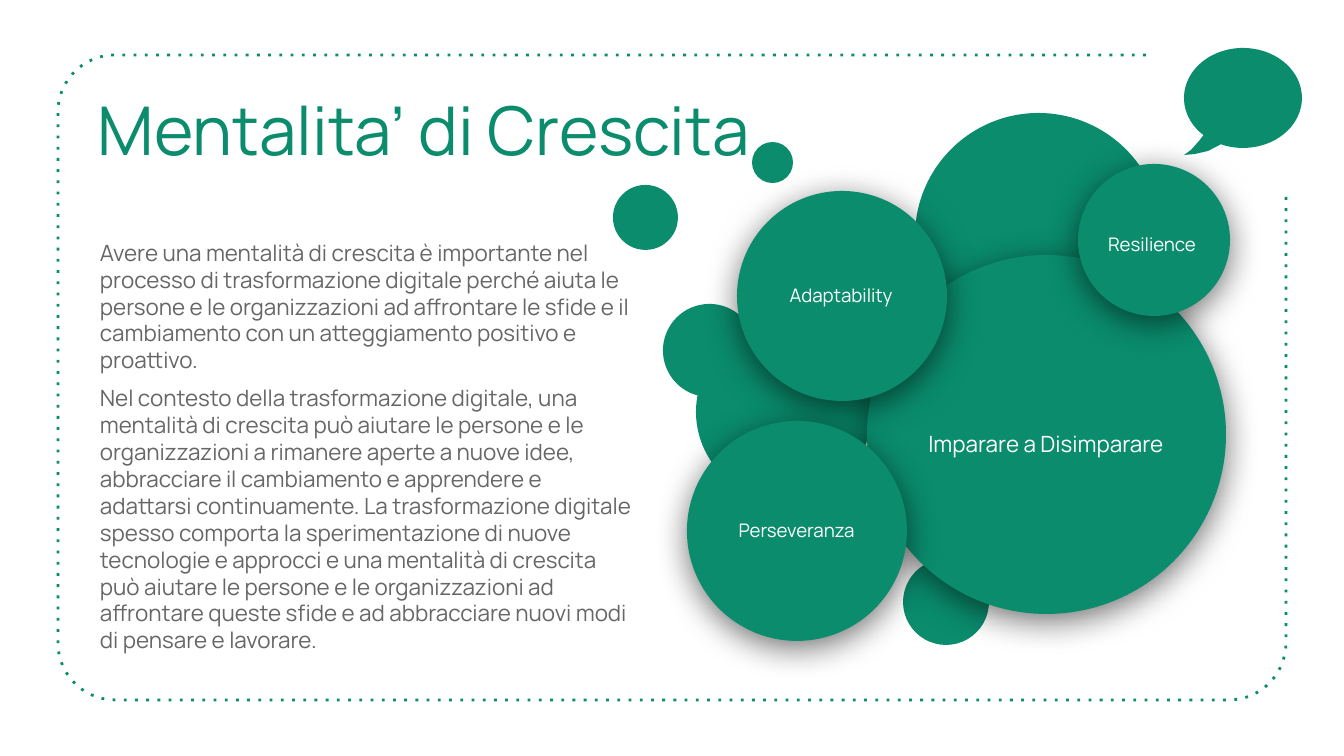
from math import cos, radians, sin

from lxml.etree import SubElement
from pptx import Presentation
from pptx.dml.color import RGBColor
from pptx.enum.shapes import MSO_SHAPE
from pptx.enum.text import MSO_ANCHOR, PP_ALIGN
from pptx.oxml.ns import qn
from pptx.util import Pt

PX = 914400 / 134.4
GREEN, GREY, WHITE = "0A8C6D", "666666", "FFFFFF"
INSET = 13

TITLE = "Mentalita’ di Crescita"
BODY = [
    "Avere una mentalità di crescita è importante nel processo di trasformazione "
    "digitale perché aiuta le persone e le organizzazioni ad affrontare le sfide e il "
    "cambiamento con un atteggiamento positivo e proattivo.",
    "Nel contesto della trasformazione digitale, una mentalità di crescita può aiutare "
    "le persone e le organizzazioni a rimanere aperte a nuove idee, abbracciare il "
    "cambiamento e apprendere e adattarsi continuamente. La trasformazione digitale "
    "spesso comporta la sperimentazione di nuove tecnologie e approcci e una mentalità "
    "di crescita può aiutare le persone e le organizzazioni ad affrontare queste sfide "
    "e ad abbracciare nuovi modi di pensare e lavorare.",
]
PLAIN_CIRCLES = [
    (903, 559, 86), (613, 185, 65), (696, 324, 176),
    (915, 113, 247), (663, 304, 93), (752, 142, 41),
]
SKILLS = [
    ("Imparare a Disimparare", 12, (867, 255, 359), (909, 358, 274, 171)),
    ("Adaptability", 10, (737, 191, 210), (770, 226, 142, 138)),
    ("Perseveranza", 10, (687, 421, 220), (718, 461, 157, 138)),
    ("Resilience", 10, (1078, 164, 152), (1094, 204, 116, 81)),
]
FRAME = {"left": 58, "top": 55, "right": 1286, "bottom": 700, "radius": 57}
FRAME_START, FRAME_END = (1146, 55), (1286, 196)
SPEECH_TAIL = [(1208, 151), (1195, 154), (1184, 155), (1191, 150), (1199, 141)]


def emu(px):
    """Turn px into EMU."""
    return round(px * PX)


def colour(value):
    """Turn a hex string into a colour."""
    return RGBColor.from_string(value)


def arc(cx, cy, rx, ry, start, end, step):
    """List points on an ellipse between two angles."""
    angles = [radians(a) for a in range(start, end, step)] + [radians(end)]
    return [(cx + rx * cos(a), cy + ry * sin(a)) for a in angles]


def write(shape, paragraphs, size, ink, anchor=MSO_ANCHOR.TOP, **layout):
    """Fill a shape with formatted paragraphs."""
    frame = shape.text_frame
    sides = ("margin_left", "margin_top", "margin_right", "margin_bottom")
    settings = {"word_wrap": True, "vertical_anchor": anchor}
    for name, value in {**settings, **dict.fromkeys(sides, emu(INSET))}.items():
        setattr(frame, name, value)
    for index, text in enumerate(paragraphs):
        paragraph = frame.add_paragraph() if index else frame.paragraphs[0]
        for name, value in layout.items():
            setattr(paragraph, name, value)
        run = paragraph.add_run()
        run.text = text
        for name, value in {"name": "Manrope", "size": Pt(size)}.items():
            setattr(run.font, name, value)
        run.font.color.rgb = colour(ink)
    return frame


def paint(shape):
    """Give a shape a plain green fill."""
    shape.shadow.inherit = False
    shape.fill.solid()
    shape.fill.fore_color.rgb = colour(GREEN)
    shape.line.fill.background()
    return shape


def add_green(slide, preset, x, y, width, height):
    """Add a green preset shape."""
    return paint(slide.shapes.add_shape(preset, *map(emu, (x, y, width, height))))


def add_outline(slide, points, close):
    """Add a freeform through px points."""
    builder = slide.shapes.build_freeform(*map(emu, points[0]))
    builder.add_line_segments([tuple(map(emu, p)) for p in points[1:]], close=close)
    return builder.convert_to_shape()


def add_frame(slide):
    """Draw the open dotted frame."""
    left, top, right, bottom, r = FRAME.values()
    points = [FRAME_START]
    for cx, cy, start in (
        (left + r, top + r, 270), (left + r, bottom - r, 180), (right - r, bottom - r, 90),
    ):
        points += arc(cx, cy, r, r, start, start - 90, -6)
    border = add_outline(slide, points + [FRAME_END], False)
    border.shadow.inherit = False
    border.fill.background()
    border.line.color.rgb = colour(GREEN)
    border.line.width = Pt(1.5)
    dash = SubElement(border.line.fill._xPr, qn("a:prstDash"))
    dash.set("val", "dot")


def cast_shadow(shape):
    """Add a soft shadow below a shape."""
    effects = shape.element.spPr.find(qn("a:effectLst"))
    shadow = SubElement(effects, qn("a:outerShdw"), blurRad=str(Pt(18)), dist=str(Pt(4)),
                        dir="5400000", algn="ctr", rotWithShape="0")
    black = SubElement(shadow, qn("a:srgbClr"), val="000000")
    SubElement(black, qn("a:alpha"), val="55000")


def main():
    """Build the slide."""
    deck = Presentation()
    deck.slide_width, deck.slide_height = emu(1344), emu(756)
    slide = deck.slides.add_slide(deck.slide_layouts[6])

    add_frame(slide)
    heading = slide.shapes.add_textbox(*map(emu, (85, 75, 1009, 126)))
    write(heading, [TITLE], 36, GREEN)
    paint(add_outline(slide, arc(1243, 98, 59, 50, 132, 472, 5) + SPEECH_TAIL, True))

    prose = slide.shapes.add_textbox(*map(emu, (70, 226, 578, 445)))
    frame = write(prose, BODY, 12, GREY, space_before=Pt(6))
    for paragraph in frame.paragraphs:
        paragraph._p.get_or_add_pPr().set("marL", str(emu(17)))

    for x, y, diameter in PLAIN_CIRCLES:
        add_green(slide, MSO_SHAPE.OVAL, x, y, diameter, diameter)
    for skill, size, (x, y, diameter), label_box in SKILLS:
        cast_shadow(add_green(slide, MSO_SHAPE.OVAL, x, y, diameter, diameter))
        label = add_green(slide, MSO_SHAPE.RECTANGLE, *label_box)
        write(label, [skill], size, WHITE, MSO_ANCHOR.MIDDLE, alignment=PP_ALIGN.CENTER)

    deck.save("out.pptx")


if __name__ == "__main__":
    main()
